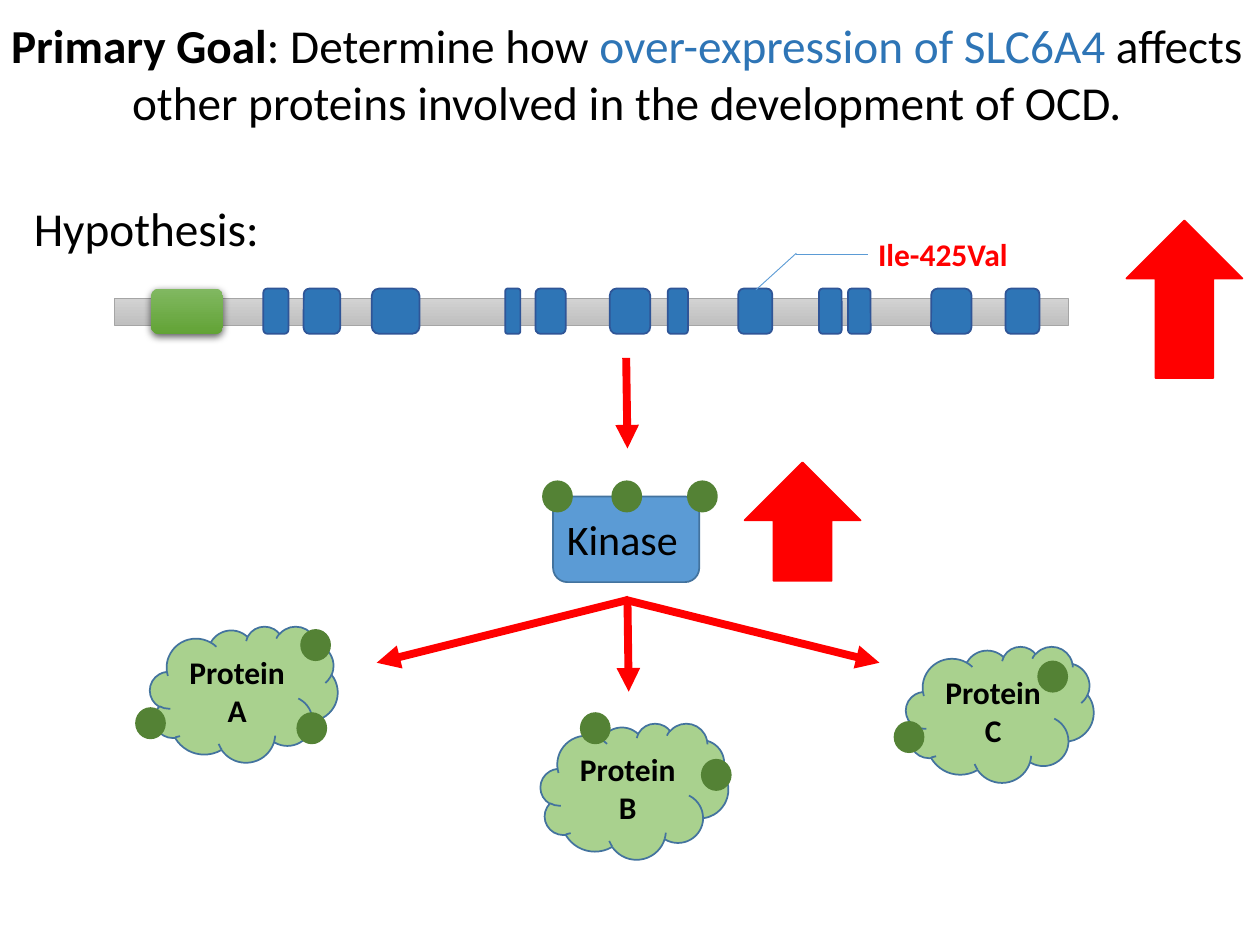
import pptx
import pptx.util
import pptx.dml.color
import pptx.enum.shapes
import pptx.enum.text
import pptx.oxml
import pptx.oxml.ns

Inches = pptx.util.Inches
Pt = pptx.util.Pt
KIND = pptx.enum.shapes.MSO_SHAPE
ALIGN = pptx.enum.text.PP_ALIGN
ANCHOR = pptx.enum.text.MSO_ANCHOR

GOAL = [
    ("Primary Goal", "000000", True),
    (": Determine how ", "000000", False),
    ("over-expression of SLC6A4 ", "2E75B6", False),
    ("affects other proteins involved in the development of OCD.", "000000", False),
]
LABELS = [
    ("Hypothesis:", (0.17, 1.53, 2.96, 0.56), 27, "000000", False),
    ("Ile-425Val", (6.87, 1.82, 2.11, 0.4), 18, "FF0000", True),
]
EXONS = [
    (2.09, 0.2), (2.41, 0.29), (2.95, 0.38), (4.01, 0.12), (4.25, 0.24), (4.84, 0.32),
    (5.3, 0.16), (5.86, 0.27), (6.5, 0.18), (6.73, 0.18), (7.39, 0.32), (7.98, 0.27),
]
KINASE_DOTS = [(4.31, 3.82), (4.86, 3.82), (5.46, 3.82)]
PROTEINS = [
    ("Protein A", (1.19, 4.97), [(1.08, 5.62), (2.39, 5), (2.36, 5.66)]),
    ("Protein B", (4.29, 5.74), [(5.57, 6.03), (4.61, 5.66)]),
    ("Protein C", (7.19, 5.13), [(8.24, 5.25), (7.1, 5.73)]),
]
FAN = [
    ((4.99, 4.76), (2.99, 5.26)),
    ((4.96, 4.76), (6.98, 5.26)),
    ((4.98, 4.77), (4.99, 5.49)),
]
RISES = [(8.94, 1.75, 0.92, 1.25), (5.91, 3.67, 0.92, 0.94)]
LEADER = [((6, 2.3), (6.32, 2.01)), ((6.32, 2.02), (6.89, 2.02))]


def color(code):
    return pptx.dml.color.RGBColor.from_string(code)


def style(run, size, code, bold):
    font = run.font
    font.name, font.size, font.bold = "Calibri", Pt(size), bold
    font.color.rgb = color(code)


def shape(home, kind, box, fill, line=None, width=1):
    item = home.add_shape(kind, *map(Inches, box))
    item.shadow.inherit = False
    if isinstance(fill, tuple):
        item.fill.gradient()
        item.fill.gradient_angle = 270
        for stop, code, spot in zip(item.fill.gradient_stops, fill, (0, 1)):
            stop.color.rgb = color(code)
            stop.position = spot
    else:
        item.fill.solid()
        item.fill.fore_color.rgb = color(fill)
    if line:
        item.line.color.rgb = color(line)
        item.line.width = Pt(width)
    else:
        item.line.fill.background()
    return item


def link(home, start, end, code, width, head=False):
    item = home.add_connector(
        pptx.enum.shapes.MSO_CONNECTOR.STRAIGHT, *map(Inches, start + end))
    item.line.color.rgb = color(code)
    item.line.width = Pt(width)
    props = item._element.spPr
    if head:
        tail = pptx.oxml.ns.qn("a:tailEnd")
        props.ln.append(props.makeelement(tail, {"type": "triangle"}))
    props.append(props.makeelement(pptx.oxml.ns.qn("a:effectLst"), {}))


def label(home, text, box, size, code, bold):
    frame = home.add_textbox(*map(Inches, box)).text_frame
    frame.word_wrap = True
    frame.text = text
    style(frame.paragraphs[0].runs[0], size, code, bold)


def dot(home, spot):
    shape(home, KIND.OVAL, spot + (0.23, 0.24), "548235", "548235")


def glow(item):
    space = pptx.oxml.ns.nsdecls("a")
    shade = pptx.oxml.parse_xml(
        f'<a:outerShdw {space} blurRad="57150" dist="19050" dir="5400000" '
        'algn="ctr" rotWithShape="0"><a:srgbClr val="000000">'
        '<a:alpha val="63000"/></a:srgbClr></a:outerShdw>')
    item._element.spPr.find(pptx.oxml.ns.qn("a:effectLst")).append(shade)


def head(slide):
    title = slide.shapes.title
    title.left, title.top, title.width, title.height = map(
        Inches, (-0.17, 0.08, 10.29, 1.01))
    frame = title.text_frame
    frame.word_wrap = True
    frame.auto_size = pptx.enum.text.MSO_AUTO_SIZE.NONE
    frame.vertical_anchor = ANCHOR.TOP
    para = frame.paragraphs[0]
    para.alignment = ALIGN.CENTER
    for text, code, bold in GOAL:
        run = para.add_run()
        run.text = text
        style(run, 27, code, bold)


def gene(home):
    shape(home, KIND.RECTANGLE, (0.91, 2.37, 7.57, 0.21),
          ("D2D2D2", "C0C0C0"), "A5A5A5", 0.5)
    glow(shape(home, KIND.ROUNDED_RECTANGLE, (1.2, 2.29, 0.57, 0.36),
               ("81B861", "62A336")))
    for left, width in EXONS:
        shape(home, KIND.ROUNDED_RECTANGLE, (left, 2.29, width, 0.36),
              "2E75B6", "2F5597")


def cascade(home):
    shape(home, KIND.ROUNDED_RECTANGLE, (4.39, 3.94, 1.16, 0.68), "5B9BD5", "43739E")
    label(home, "Kinase", (4.4, 4.03, 1.12, 0.5), 24, "000000", False)
    for spot in KINASE_DOTS:
        dot(home, spot)
    for start, end in FAN:
        link(home, start, end, "FF0000", 4.5, True)
    for name, spot, dots in PROTEINS:
        cloud = shape(home, KIND.CLOUD, spot + (1.49, 1.08), "A9D18E", "43739E")
        frame = cloud.text_frame
        frame.word_wrap = True
        frame.vertical_anchor = ANCHOR.MIDDLE
        frame.text = name
        frame.paragraphs[0].alignment = ALIGN.CENTER
        style(frame.paragraphs[0].runs[0], 18, "000000", True)
        for place in dots:
            dot(home, place)


def main():
    deck = pptx.Presentation()
    deck.slide_width, deck.slide_height = Inches(10), Inches(7.5)
    slide = deck.slides.add_slide(deck.slide_layouts[5])
    home = slide.shapes
    head(slide)
    link(home, (4.97, 2.84), (4.98, 3.56), "FF0000", 4.5, True)
    gene(home.add_group_shape().shapes)
    cascade(home.add_group_shape().shapes)
    for box in RISES:
        shape(home, KIND.UP_ARROW, box, "FF0000", "FF0000")
    for start, end in LEADER:
        link(home, start, end, "5B9BD5", 0.5)
    for item in LABELS:
        label(home, *item)
    deck.save("out.pptx")


if __name__ == "__main__":
    main()
